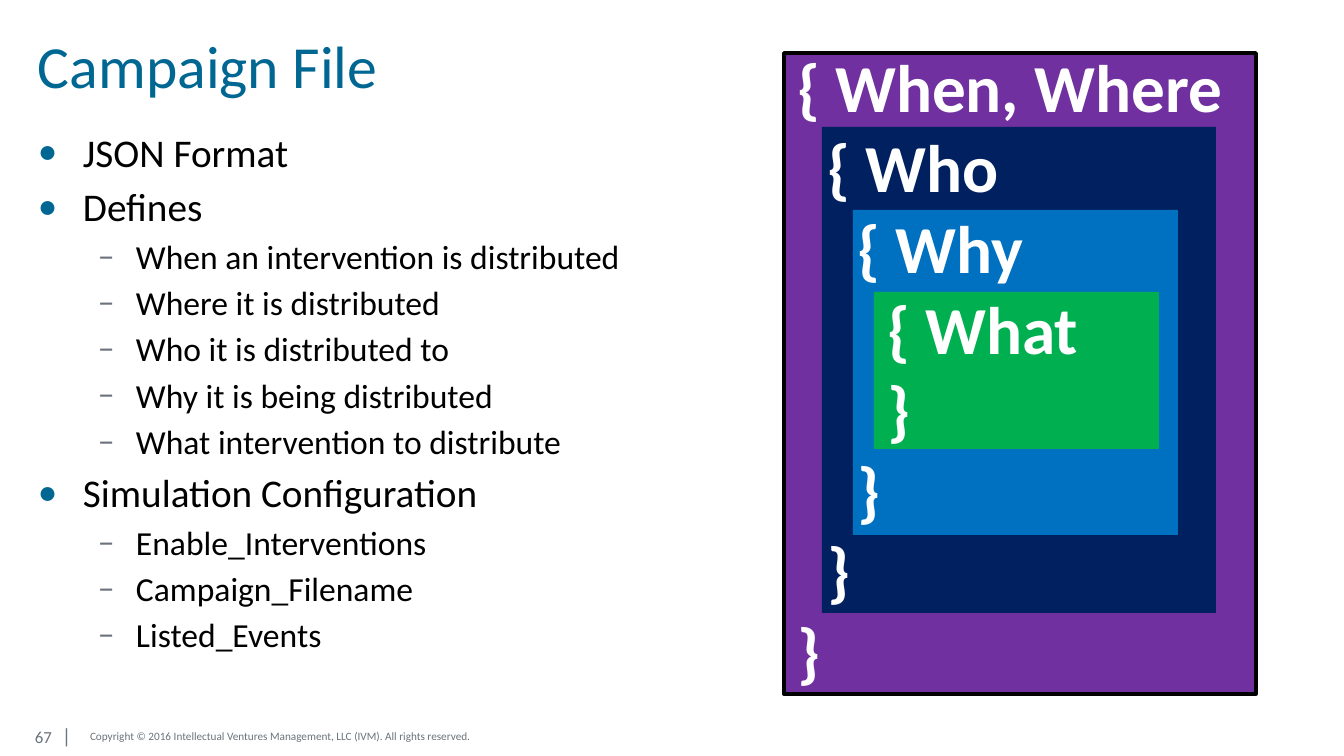
from lxml.etree import SubElement
from pptx import Presentation
from pptx.dml.color import RGBColor
from pptx.enum.shapes import MSO_SHAPE as Shape
from pptx.enum.text import MSO_ANCHOR as Anchor, MSO_AUTO_SIZE as AutoSize, PP_ALIGN as Align
from pptx.oxml.ns import qn
from pptx.util import Pt

PX = 914400 / 134.4  # EMU per px

TEAL = RGBColor(0x00, 0x66, 0x92)
GRAY = RGBColor(0x6A, 0x73, 0x7B)
BLACK = RGBColor(0x00, 0x00, 0x00)
WHITE = RGBColor(0xFF, 0xFF, 0xFF)
PURPLE = RGBColor(0x70, 0x30, 0xA0)
NAVY = RGBColor(0x00, 0x20, 0x60)
BLUE = RGBColor(0x00, 0x70, 0xC0)
GREEN = RGBColor(0x00, 0xB0, 0x50)


def px(*lengths):
    return [round(length * PX) for length in lengths]


def set_up(shape, box, anchor, inset_x, inset_y):
    """Place a text shape and return its frame."""
    shape.left, shape.top, shape.width, shape.height = px(*box)
    frame = shape.text_frame
    frame.word_wrap = True
    frame.auto_size = AutoSize.NONE
    frame.vertical_anchor = anchor
    frame.margin_left = frame.margin_right = px(inset_x)[0]
    frame.margin_top = frame.margin_bottom = px(inset_y)[0]
    return frame


deck = Presentation()
deck.slide_width, deck.slide_height = px(1344, 756)
slide = deck.slides.add_slide(deck.slide_layouts[1])
title, body = slide.placeholders

# Footer: page number with divider, copyright
page = set_up(slide.shapes.add_textbox(0, 0, 0, 0), (27, 708, 56, 55), Anchor.MIDDLE, 8, 4)
page_line = page.paragraphs[0]
tabs = SubElement(page_line._p.get_or_add_pPr(), qn("a:tabLst"))
SubElement(tabs, qn("a:tab"), pos=str(px(27)[0]), algn="l")
for words, size in (("67\t", 9), ("|", 11)):
    run = page_line.add_run()
    run.text = words
    run.font.size = Pt(size)
page_line.font.name = "Calibri"
for run in page_line.runs:
    run.font.name = "Calibri"
    run.font.color.rgb = GRAY

rights = set_up(slide.shapes.add_textbox(0, 0, 0, 0), (82, 716, 426, 40), Anchor.MIDDLE, 8, 4)
rights.text = "Copyright © 2016 Intellectual Ventures Management, LLC (IVM). All rights reserved."
rights_font = rights.paragraphs[0].font
rights_font.name, rights_font.size = "Calibri", Pt(6)
rights_font.color.rgb = GRAY

# Title
heading = set_up(title, (26, 20, 1210, 90), Anchor.MIDDLE, 12, 5)
heading.text = "Campaign File"
heading_line = heading.paragraphs[0]
heading_line.alignment = Align.LEFT
heading_line.font.name, heading_line.font.size = "Calibri", Pt(32)
heading_line.font.color.rgb = TEAL

# Bullet list: (level, text)
points = [
    (0, "JSON Format"),
    (0, "Defines"),
    (1, "When an intervention is distributed"),
    (1, "Where it is distributed"),
    (1, "Who it is distributed to"),
    (1, "Why it is being distributed"),
    (1, "What intervention to distribute"),
    (0, "Simulation Configuration"),
    (1, "Enable_Interventions"),
    (1, "Campaign_Filename"),
    (1, "Listed_Events"),
]
# Per level: indent px, hanging px, bullet, bullet colour, size, space before
levels = [(45, 45, "•", TEAL, 21, 4), (98, 38, "–", GRAY, 18, 3.2)]
outline = set_up(body, (26, 123, 624, 555), Anchor.TOP, 12, 5)
for i, (level, words) in enumerate(points):
    indent, hanging, mark, mark_color, size, gap = levels[level]
    point = outline.add_paragraph() if i else outline.paragraphs[0]
    point.text = words
    point.level = level
    point.space_before = Pt(gap if i else 0)
    props = point._p.get_or_add_pPr()
    props.set("marL", str(px(indent)[0]))
    props.set("indent", str(px(-hanging)[0]))
    SubElement(SubElement(props, qn("a:buClr")), qn("a:srgbClr"), val=str(mark_color))
    SubElement(props, qn("a:buFont"), typeface="Calibri")
    SubElement(props, qn("a:buChar"), char=mark)
    point.font.name, point.font.size = "Calibri", Pt(size)
    point.font.color.rgb = BLACK

# Nested blocks
nest = slide.shapes.add_group_shape().shapes
blocks = [
    (PURPLE, (784, 53, 472, 641)),
    (NAVY, (822, 127, 394, 486)),
    (BLUE, (853, 210, 325, 325)),
    (GREEN, (874, 292, 285, 157)),
]
for color, box in blocks:
    block = nest.add_shape(Shape.RECTANGLE, *px(*box))
    block.shadow.inherit = False
    block.fill.solid()
    block.fill.fore_color.rgb = color
    if color == PURPLE:
        block.line.color.rgb = BLACK
        block.line.width = Pt(2)
    else:
        block.line.fill.background()

# Braces over the blocks, indented one step per depth
STEP = 30
openings = ["{ When, Where", "{ Who", "{ Why", "{ What"]
brace_lines = list(enumerate(openings)) + [(depth, "}") for depth in (3, 2, 1, 0)]
braces = set_up(nest.add_textbox(0, 0, 0, 0), (784, 38, 504, 665), Anchor.TOP, 13, 7)
for i, (depth, words) in enumerate(brace_lines):
    line = braces.add_paragraph() if i else braces.paragraphs[0]
    line.text = words
    line._p.get_or_add_pPr().set("marL", str(px(STEP * depth)[0]))
    line.font.name, line.font.size, line.font.bold = "Calibri", Pt(36), True
    line.font.color.rgb = WHITE

deck.save("out.pptx")
